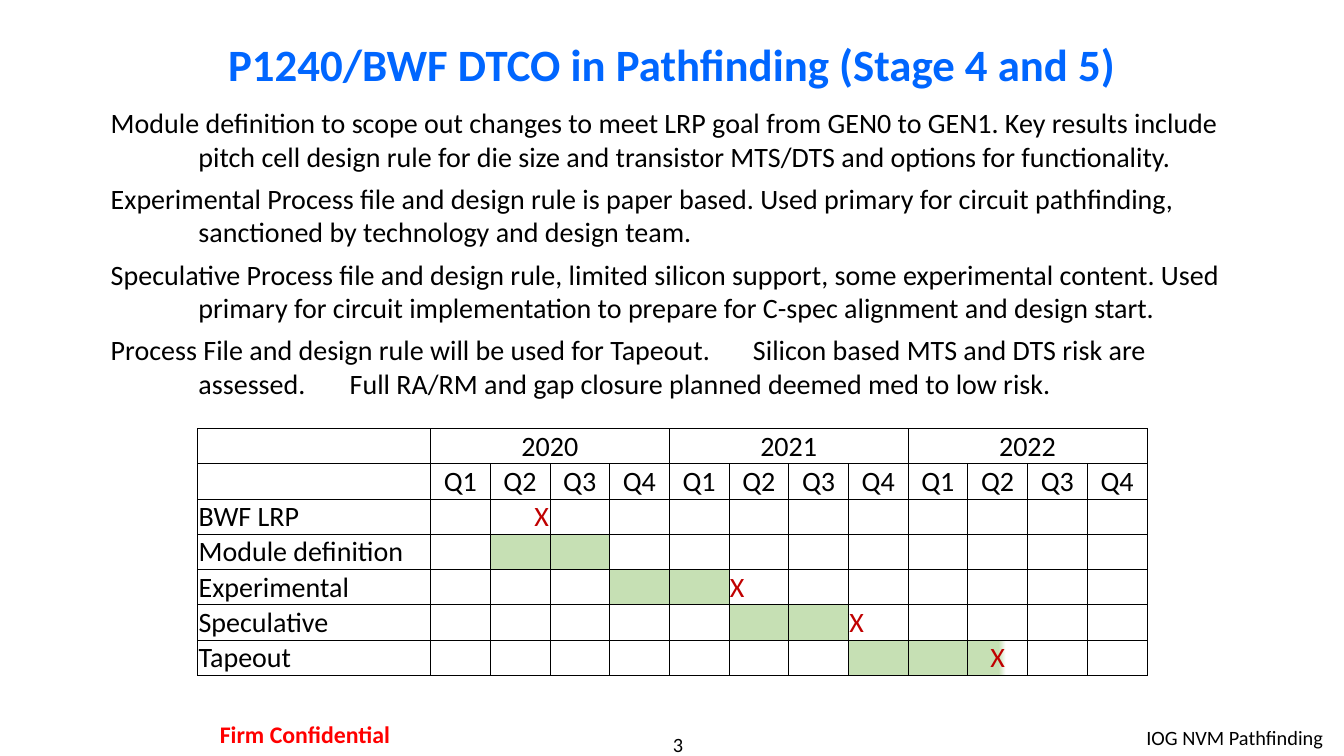
from lxml.etree import SubElement
from pptx import Presentation
from pptx.dml.color import RGBColor
from pptx.enum.text import MSO_ANCHOR, PP_ALIGN
from pptx.oxml.ns import qn
from pptx.util import Inches, Pt

LEFT, MID, RIGHT = PP_ALIGN.LEFT, PP_ALIGN.CENTER, PP_ALIGN.RIGHT
BLACK, WHITE, BLUE, RED = "000000", "FFFFFF", "0066FF", "FF0000"
MARK, GREEN = "C00000", "C6E0B4"

POINTS = [
    "Module definition to scope out changes to meet LRP goal from GEN0 to GEN1. "
    "Key results include pitch cell design rule for die size and transistor "
    "MTS/DTS and options for functionality.",
    "Experimental Process file and design rule is paper based. Used primary for "
    "circuit pathfinding, sanctioned by technology and design team.",
    "Speculative Process file and design rule, limited silicon support, some "
    "experimental content. Used primary for circuit implementation to prepare "
    "for C-spec alignment and design start.",
    "Process File and design rule will be used for Tapeout.\tSilicon based MTS "
    "and DTS risk are assessed.\tFull RA/RM and gap closure planned deemed med "
    "to low risk.",
]
YEARS = ["2020", "2021", "2022"]
# task, shaded quarters, quarter of the X, alignment of the X
TASKS = [
    ("BWF LRP", [], 2, RIGHT),
    ("Module definition", [2, 3], None, LEFT),
    ("Experimental", [4, 5], 6, LEFT),
    ("Speculative", [6, 7], 8, LEFT),
    ("Tapeout", [8, 9], 10, MID),
]


def rgb(code):
    return RGBColor.from_string(code)


def write(frame, *lines, size=20, color=BLACK, bold=False, align=LEFT,
          gap=0, hang=0, tabs=()):
    """Fill a text frame with one paragraph per line."""
    for i, line in enumerate(lines):
        para = frame.add_paragraph() if i else frame.paragraphs[0]
        para.alignment = align
        para.space_before = Pt(gap if i else 0)
        props = para._p.get_or_add_pPr()
        if hang:
            props.set("marL", str(Inches(hang)))
            props.set("indent", str(-Inches(hang)))
        if tabs and "\t" in line:
            stops = SubElement(props, qn("a:tabLst"))
            for stop in tabs:
                SubElement(stops, qn("a:tab"), pos=str(Inches(stop)), algn="l")
        run = para.add_run()
        run.text = line
        font = run.font
        font.name, font.size, font.bold = "Calibri", Pt(size), bold
        font.color.rgb = rgb(color)


def pad(item, left, top, right, bottom):
    item.margin_left, item.margin_top = Inches(left), Inches(top)
    item.margin_right, item.margin_bottom = Inches(right), Inches(bottom)


class Deck:
    def __init__(self):
        self.file = Presentation()
        self.file.slide_width = Inches(13.33)
        self.file.slide_height = Inches(7.5)
        self.slide = self.file.slides.add_slide(self.file.slide_layouts[5])

    def title(self, text, x, y, w, h):
        shape = self.slide.shapes.title
        shape.left, shape.top = Inches(x), Inches(y)
        shape.width, shape.height = Inches(w), Inches(h)
        shape.text_frame.vertical_anchor = MSO_ANCHOR.MIDDLE
        write(shape.text_frame, text, size=32, color=BLUE, bold=True, align=MID)

    def text(self, lines, x, y, w, h, inset=(0.1, 0.05), **style):
        box = self.slide.shapes.add_textbox(
            Inches(x), Inches(y), Inches(w), Inches(h))
        box.text_frame.word_wrap = True
        pad(box.text_frame, *inset, *inset)
        write(box.text_frame, *lines, **style)

    def grid(self, rows, cols, x, y, first, rest, high):
        """Add a plain ruled table: a wide first column, then equal ones."""
        table = self.slide.shapes.add_table(
            rows, cols, Inches(x), Inches(y),
            Inches(first + rest), Inches(high * rows)).table
        table.first_row = table.horz_banding = False
        for i, col in enumerate(table.columns):
            col.width = Inches(rest / (cols - 1) if i else first)
        for row in table.rows:
            row.height = Inches(high)
        for cell in table.iter_cells():
            pad(cell, 0.01, 0.01, 0.01, 0)
            cell.vertical_anchor = MSO_ANCHOR.MIDDLE
            self.rule(cell)
            cell.fill.background()
        return table

    def rule(self, cell):
        props = cell._tc.get_or_add_tcPr()
        for side in ("lnL", "lnR", "lnT", "lnB"):
            line = SubElement(props, qn("a:" + side), w=str(Pt(0.5)))
            fill = SubElement(line, qn("a:solidFill"))
            SubElement(fill, qn("a:srgbClr"), val=BLACK)

    def shade(self, cell):
        cell.fill.solid()
        cell.fill.fore_color.rgb = rgb(GREEN)

    def fade(self, cell):
        cell.fill.gradient()
        cell.fill.gradient_angle = 0
        ends = [(0.52, GREEN), (0.64, WHITE)]
        for stop, (place, color) in zip(cell.fill.gradient_stops, ends):
            stop.position = place
            stop.color.rgb = rgb(color)


def main():
    deck = Deck()

    # Footer
    deck.text(["3"], 5.56, 7.26, 2.33, 0.24, (0, 0), size=14.5, align=MID)
    deck.text(["IOG NVM Pathfinding"], 8.83, 7.15, 4.39, 0.35,
              size=14.5, align=RIGHT)
    deck.text(["Firm Confidential"], 1.55, 7.08, 2.95, 0.41, (0.12, 0.06),
              size=17, color=RED, bold=True, align=MID)

    # Title and body
    deck.title("P1240/BWF DTCO in Pathfinding (Stage 4 and 5)",
               1, 0.17, 11.33, 0.92)
    deck.text(POINTS, 1, 1, 11.33, 3.33, gap=6, hang=0.87, tabs=(2.12, 6.2))

    # Schedule heads
    plan = deck.grid(7, 13, 1.96, 4.25, 2.31, 7.11, 0.35)
    for i, year in enumerate(YEARS):
        start = 1 + 4 * i
        plan.cell(0, start).merge(plan.cell(0, start + 3))
        write(plan.cell(0, start).text_frame, year, align=MID)
        for j in range(4):
            write(plan.cell(1, start + j).text_frame, f"Q{j + 1}", align=MID)

    # Schedule tasks
    for row, (task, shaded, mark, align) in enumerate(TASKS, 2):
        write(plan.cell(row, 0).text_frame, task)
        for col in shaded:
            deck.shade(plan.cell(row, col))
        if mark:
            write(plan.cell(row, mark).text_frame, "X", color=MARK, align=align)
    deck.fade(plan.cell(6, 10))

    deck.file.save("out.pptx")


if __name__ == "__main__":
    main()
